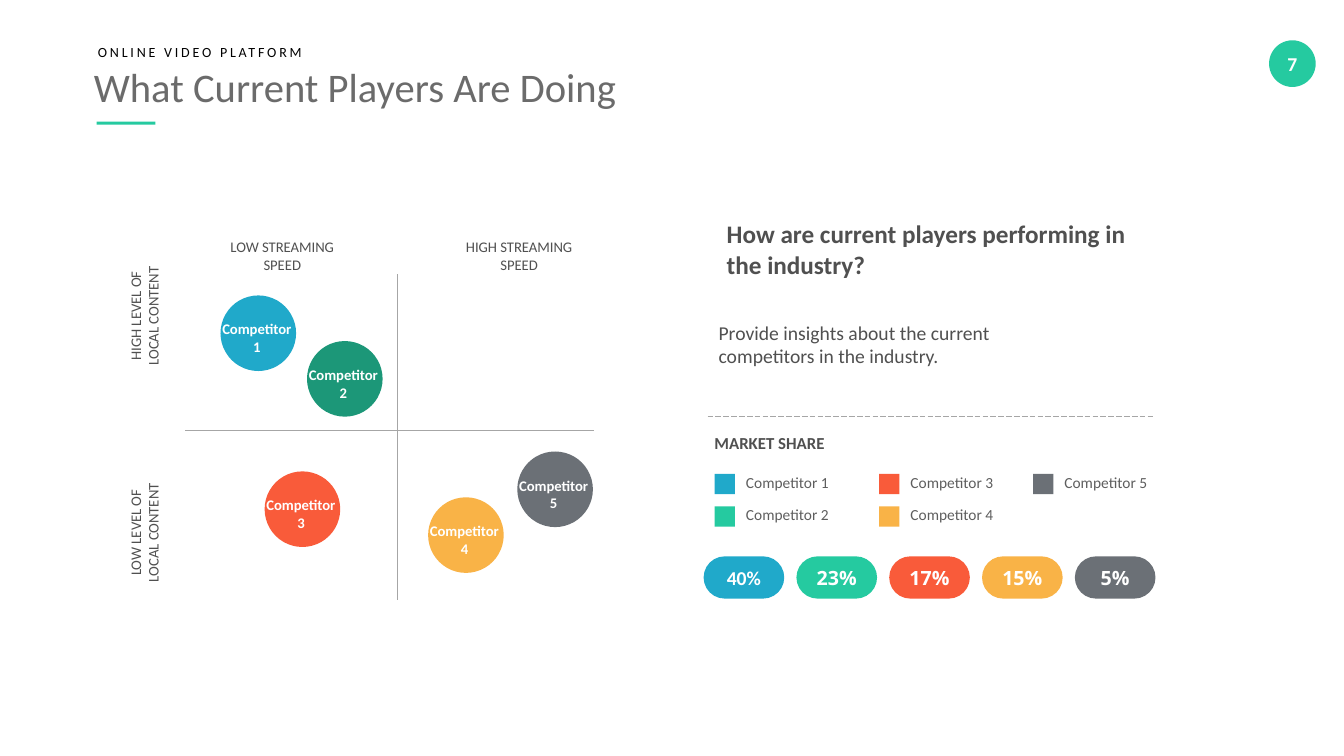
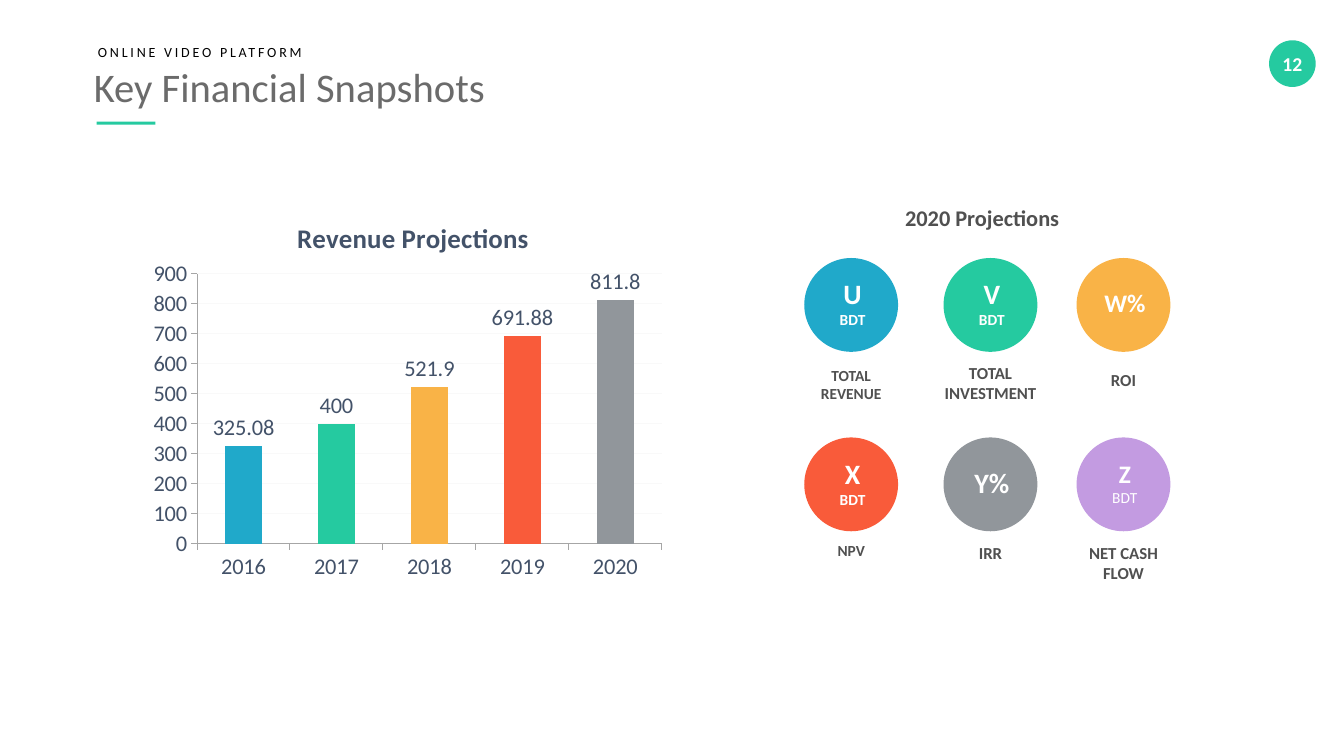
from lxml import etree
from pptx import Presentation
from pptx.chart.data import CategoryChartData
from pptx.dml.color import RGBColor
from pptx.enum.chart import XL_CHART_TYPE, XL_LABEL_POSITION, XL_TICK_MARK
from pptx.enum.dml import MSO_LINE
from pptx.enum.shapes import MSO_CONNECTOR, MSO_SHAPE
from pptx.enum.text import MSO_ANCHOR, PP_ALIGN
from pptx.oxml import parse_xml
from pptx.oxml.ns import qn
from pptx.util import Pt

CENTER, LEFT = PP_ALIGN.CENTER, PP_ALIGN.LEFT
MIDDLE, TOP = MSO_ANCHOR.MIDDLE, MSO_ANCHOR.TOP
OVAL, RECT, PILL = MSO_SHAPE.OVAL, MSO_SHAPE.RECTANGLE, MSO_SHAPE.ROUNDED_RECTANGLE
COLUMNS, OUTSIDE_END = XL_CHART_TYPE.COLUMN_CLUSTERED, XL_LABEL_POSITION.OUTSIDE_END
TICK_OUT, TICK_NONE = XL_TICK_MARK.OUTSIDE, XL_TICK_MARK.NONE

# Shared look
FONT = "Calibri"
BLUE, GREEN, DARK_GREEN, RED = "20A9CA", "25CAA0", "1C9778", "F95B3A"
AMBER, SLATE, GRAY, LILAC = "F9B347", "6B7076", "91969B", "C39BE1"
WHITE, BLACK, INK, TITLE_INK = "FFFFFF", "000000", "505050", "6B6B6B"
LEGEND_INK, CHART_INK, RULE, GRID = "5E5E5E", "435269", "A6A6A6", "F9F9F9"
PADDING, NO_PADDING = (7.2, 3.6, 7.2, 3.6), (0, 0, 0, 0)
KICKER = "ONLINE VIDEO PLATFORM"

# Content: competitors
AXIS_LABELS = [  # text, left, top, rotation
    ("LOW STREAMING SPEED", 153.4, 166.3, 0),
    ("HIGH STREAMING SPEED", 322.6, 166.3, 0),
    ("HIGH LEVEL OF\nLOCAL CONTENT", 54.7, 209.5, 270),
    ("LOW LEVEL OF\nLOCAL CONTENT", 54.7, 364.3, 270),
]
AXES = [(283.7, 196, 283.7, 428.4), (132.5, 307.4, 424, 307.4)]
COMPETITORS = [  # bubble left, bubble top, bubble colour, legend colour, share, share font
    (157.5, 211, BLUE, BLUE, "40%", FONT),
    (219.3, 243.6, DARK_GREEN, GREEN, "23%", "Open Sans"),
    (189, 336.7, RED, RED, "17%", "Open Sans"),
    (305.8, 355.2, AMBER, AMBER, "15%", "Open Sans"),
    (369.5, 322.5, SLATE, SLATE, "5%", "Open Sans"),
]
BUBBLE = 54
LEGEND_COLUMNS, LEGEND_TOP, LEGEND_PITCH, SWATCH = (510.5, 628, 738), 338.5, 23.2, 14.5
SHARE_LEFT, SHARE_TOP, SHARE_PITCH, SHARE_SIZE = 502.6, 397.4, 66.3, (57.6, 30.2)

# Content: financials
REVENUE = [("2016", 325.08, BLUE), ("2017", 400, GREEN), ("2018", 521.9, AMBER),
           ("2019", 691.88, RED), ("2020", 811.8, GRAY)]
PROJECTIONS = [  # value, value size, unit, unit bold, colour, label, label size, label top
    ("U", 20, "BDT", True, BLUE, "TOTAL REVENUE", 11, 257.8),
    ("V", 20, "BDT", True, GREEN, "TOTAL INVESTMENT", 12, 255.6),
    ("W%", 18, "", True, AMBER, "ROI", 12, 260.6),
    ("X", 20, "BDT", True, RED, "NPV", 11, 383),
    ("Y%", 20, "", True, GRAY, "IRR", 12, 384.5),
    ("Z", 18, "BDT", False, LILAC, "NET CASH FLOW", 12, 383.8),
]
COIN, COIN_COLUMNS, COIN_ROWS, COIN_LABEL = 67, (574.5, 674, 769), (184.3, 312.5), 85


def rgb(value):
    return RGBColor.from_string(value)


def set_all(target, **values):
    for name, value in values.items():
        setattr(target, name, value)


def style_font(font, size, color, bold=False, name=FONT):
    set_all(font, size=Pt(size), bold=bold, name=name)
    font.color.rgb = rgb(color)


def write(shape, lines, align=LEFT, anchor=TOP, padding=PADDING, spacing=None):
    """Each line is (text, size, colour, bold[, font])."""
    frame = shape.text_frame
    left, top, right, bottom = map(Pt, padding)
    set_all(frame, word_wrap=True, vertical_anchor=anchor, margin_left=left,
            margin_top=top, margin_right=right, margin_bottom=bottom)
    for i, (text, *style) in enumerate(lines):
        paragraph = frame.add_paragraph() if i else frame.paragraphs[0]
        set_all(paragraph, alignment=align, line_spacing=spacing)
        run = paragraph.add_run()
        run.text = text
        style_font(run.font, *style)


def add_text(slide, box, lines, **layout):
    label = slide.shapes.add_textbox(*map(Pt, box))
    write(label, lines, **layout)
    return label


def add_block(slide, kind, box, color):
    block = slide.shapes.add_shape(kind, *map(Pt, box))
    block.shadow.inherit = False
    block.fill.solid()
    block.fill.fore_color.rgb = rgb(color)
    block.line.fill.background()
    return block


def add_rule(slide, ends, dash=None):
    rule = slide.shapes.add_connector(MSO_CONNECTOR.STRAIGHT, *map(Pt, ends))
    rule.line.color.rgb = rgb(RULE)
    set_all(rule.line, width=Pt(0.5), dash_style=dash)
    etree.SubElement(rule._element.spPr, qn("a:effectLst"))


def add_page(deck, title, number):
    slide = deck.slides.add_slide(deck.slide_layouts[6])
    badge = add_block(slide, OVAL, (906.5, 28.8, 33.3, 33.3), GREEN)
    write(badge, [(number, 14, WHITE, True)], CENTER, MIDDLE, NO_PADDING)
    add_text(slide, (67, 44, 600, 35), [(title, 29, TITLE_INK)],
             anchor=MIDDLE, padding=NO_PADDING)
    kicker = add_text(slide, (70, 31, 200, 12.2), [(KICKER, 10, BLACK)],
                      anchor=MIDDLE, padding=NO_PADDING)
    kicker.text_frame.paragraphs[0].runs[0]._r.get_or_add_rPr().set("spc", "200")
    add_block(slide, RECT, (69, 86.9, 42, 2.2), GREEN)
    return slide


def place(parent, x, y, w=None, h=None):
    """Give a chart part a fixed place, as fractions of the chart."""
    for old in parent.findall(qn("c:layout")):
        parent.remove(old)
    target = '<c:layoutTarget val="inner"/>' if w else ""
    modes = '<c:xMode val="edge"/><c:yMode val="edge"/>'
    sizes = f'<c:w val="{w}"/><c:h val="{h}"/>' if w else ""
    layout = parse_xml(
        '<c:layout xmlns:c="http://schemas.openxmlformats.org/drawingml/2006/chart">'
        f'<c:manualLayout>{target}{modes}<c:x val="{x}"/><c:y val="{y}"/>{sizes}'
        '</c:manualLayout></c:layout>')
    text = parent.find(qn("c:tx"))
    parent.insert(0 if text is None else 1, layout)


def add_competitors(deck):
    slide = add_page(deck, "What Current Players Are Doing", "7")

    # Quadrant
    for ends in AXES:
        add_rule(slide, ends)
    for text, left, top, rotation in AXIS_LABELS:
        label = add_text(slide, (left, top, 96.5, 32.4),
                         [(line, 10.5, INK) for line in text.split("\n")], align=CENTER)
        label.rotation = rotation

    # Question and insight
    add_text(slide, (512, 152.6, 317, 51),
             [("How are current players performing in the industry?", 18, INK, True)])
    add_text(slide, (506.2, 225.4, 265.7, 41),
             [("Provide insights about the current competitors in the industry.", 14, INK)])
    add_rule(slide, (505.4, 297.4, 825, 297.4), MSO_LINE.LONG_DASH)
    add_text(slide, (503.3, 305.3, 274, 21.6), [("MARKET SHARE", 12, INK, True)])

    # Bubble, legend entry and share of each competitor
    for i, (left, top, bubble_color, color, share, font) in enumerate(COMPETITORS):
        bubble = add_block(slide, OVAL, (left, top, BUBBLE, BUBBLE), bubble_color)
        write(bubble, [], padding=NO_PADDING)
        add_text(slide, (left - 7, top + 14.2, BUBBLE + 12, 32.4),
                 [("Competitor", 10.5, WHITE, True), (str(i + 1), 10.5, WHITE, True)],
                 align=CENTER, padding=(0, 3.6, 0, 3.6))

        column, row = divmod(i, 2)
        x, y = LEGEND_COLUMNS[column], LEGEND_TOP + row * LEGEND_PITCH
        add_block(slide, RECT, (x, y, SWATCH, SWATCH), color)
        add_text(slide, (x + 15.2, y - 4.4, 135, 21),
                 [(f"Competitor {i + 1}", 11, LEGEND_INK)])

        pill = add_block(slide, PILL, (SHARE_LEFT + i * SHARE_PITCH, SHARE_TOP, *SHARE_SIZE),
                         color)
        pill.adjustments[0] = 0.5
        write(pill, [(share, 14, WHITE, True, font)], CENTER, MIDDLE, NO_PADDING)


def add_revenue_chart(slide):
    data = CategoryChartData()
    data.categories = [year for year, _, _ in REVENUE]
    data.add_series("Series 1", [value for _, value, _ in REVENUE])
    chart = slide.shapes.add_chart(COLUMNS, *map(Pt, (103, 136, 377.3, 283.7)), data).chart
    set_all(chart, has_legend=False, has_title=True)
    style_font(chart.font, 16, CHART_INK)

    title = chart.chart_title
    title.include_in_layout = False
    title.text_frame.text = "Revenue Projections"
    style_font(title.text_frame.paragraphs[0].runs[0].font, 19.2, CHART_INK, True)
    place(title._element, 0.28, 0.06)
    place(chart._chartSpace.chart.plotArea, 0.1, 0.21, 0.88, 0.68)

    set_all(chart.value_axis, minimum_scale=0, maximum_scale=900, major_unit=100,
            has_major_gridlines=True)
    grid = chart.value_axis.major_gridlines.format.line
    grid.color.rgb = rgb(GRID)
    grid.width = Pt(0.75)
    for axis in (chart.category_axis, chart.value_axis):
        set_all(axis, major_tick_mark=TICK_OUT, minor_tick_mark=TICK_NONE)
        axis.format.line.color.rgb = rgb(RULE)
        axis.format.line.width = Pt(0.75)

    plot = chart.plots[0]
    set_all(plot, gap_width=150, vary_by_categories=False, has_data_labels=True)
    set_all(plot.data_labels, show_value=True, position=OUTSIDE_END)
    style_font(plot.data_labels.font, 16, CHART_INK)
    for i, (_, _, color) in enumerate(REVENUE):
        fill = plot.series[0].points[i].format.fill
        fill.solid()
        fill.fore_color.rgb = rgb(color)


def add_financials(deck):
    slide = add_page(deck, "Key Financial Snapshots", "12")
    add_revenue_chart(slide)

    # Projection coins, three to a row
    add_text(slide, (639.4, 138.2, 140, 30), [("2020 Projections", 16, INK, True)],
             spacing=1.2)
    for i, (value, size, unit, unit_bold, color, label, label_size, label_top) in enumerate(
            PROJECTIONS):
        row, column = divmod(i, len(COIN_COLUMNS))
        x, y = COIN_COLUMNS[column], COIN_ROWS[row]
        coin = add_block(slide, OVAL, (x, y, COIN, COIN), color)
        lines = [(value, size, WHITE, True)]
        if unit:
            lines.append((unit, 11, WHITE, unit_bold))
        write(coin, lines, CENTER, MIDDLE, (2, 0, 0, 3))
        add_text(slide, (x + (COIN - COIN_LABEL) / 2, label_top, COIN_LABEL, 36),
                 [(label, label_size, INK, True)], align=CENTER)


def main():
    deck = Presentation()
    set_all(deck, slide_width=Pt(960), slide_height=Pt(540))
    add_competitors(deck)
    add_financials(deck)
    deck.save("out.pptx")


if __name__ == "__main__":
    main()
